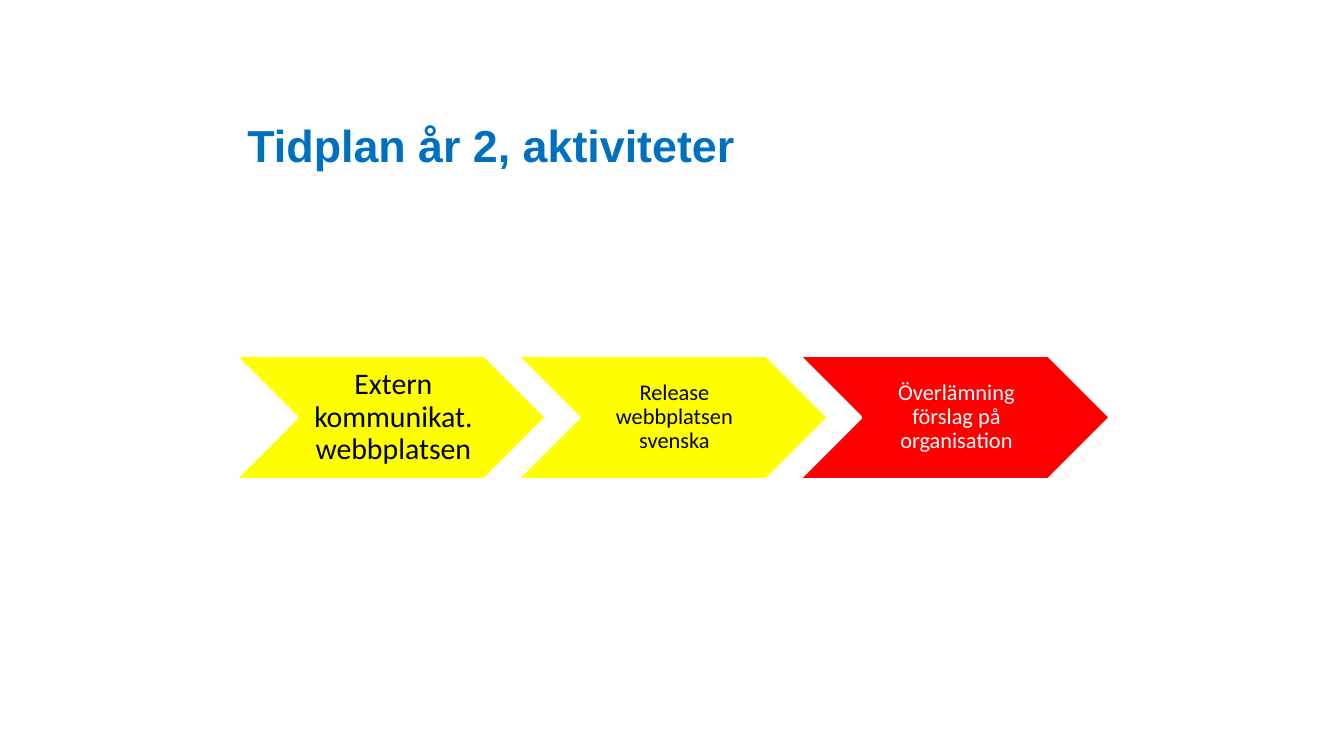
from pptx import Presentation
from pptx.dml.color import RGBColor
from pptx.enum.shapes import MSO_SHAPE as SHAPE
from pptx.enum.text import MSO_ANCHOR as ANCHOR, PP_ALIGN as ALIGN
from pptx.util import Pt

# Content: text, size in pt, left inset in px, fill, text colour
TITLE = "Tidplan år 2, aktiviteter"
STEPS = [
    ("Extern kommunikat. webbplatsen", 16, 9, "yellow", "black"),
    ("Release webbplatsen svenska", 12, 7, "yellow", "black"),
    ("Överlämning förslag på organisation", 12, 7, "red", "white"),
]
COLORS = {"blue": "0070C0", "yellow": "FFFF00", "red": "FF0000",
          "black": "000000", "white": "FFFFFF"}

# Layout in px
SLIDE_W, SLIDE_H = 1344, 756
LEFT = 234
TITLE_TOP, TITLE_W, TITLE_H = 56, 879, 122
STEP_TOP, STEP_W, STEP_H, STEP_PITCH = 355, 313, 125, 282
INSET = 3


def px(n):
    return round(n * 914400 / 134.4)


def rgb(name):
    return RGBColor.from_string(COLORS[name])


def add_run(p, text, size, font, color, bold=False):
    r = p.add_run()
    r.text = text
    r.font.size = Pt(size)
    r.font.name = font
    r.font.bold = bold
    r.font.color.rgb = rgb(color)


prs = Presentation()
prs.slide_width, prs.slide_height = px(SLIDE_W), px(SLIDE_H)
s = prs.slides.add_slide(prs.slide_layouts[5])

# Title
title = s.shapes.title
title.left, title.top = px(LEFT), px(TITLE_TOP)
title.width, title.height = px(TITLE_W), px(TITLE_H)
tf = title.text_frame
tf.vertical_anchor = ANCHOR.BOTTOM
p = tf.paragraphs[0]
p.alignment = ALIGN.LEFT
add_run(p, TITLE, 24, "Arial", "blue", bold=True)

# Chevron process
for i, (text, size, inset_left, fill, color) in enumerate(STEPS):
    sp = s.shapes.add_shape(SHAPE.CHEVRON, px(LEFT + i * STEP_PITCH),
                            px(STEP_TOP), px(STEP_W), px(STEP_H))
    sp.shadow.inherit = False
    sp.fill.solid()
    sp.fill.fore_color.rgb = rgb(fill)
    sp.line.color.rgb = rgb("white")
    sp.line.width = Pt(2)
    tf = sp.text_frame
    tf.word_wrap = True
    tf.vertical_anchor = ANCHOR.MIDDLE
    tf.margin_left = px(inset_left)
    tf.margin_top = tf.margin_right = tf.margin_bottom = px(INSET)
    p = tf.paragraphs[0]
    p.alignment = ALIGN.CENTER
    p.line_spacing = 0.9
    add_run(p, text, size, "Calibri", color)

prs.save("out.pptx")
